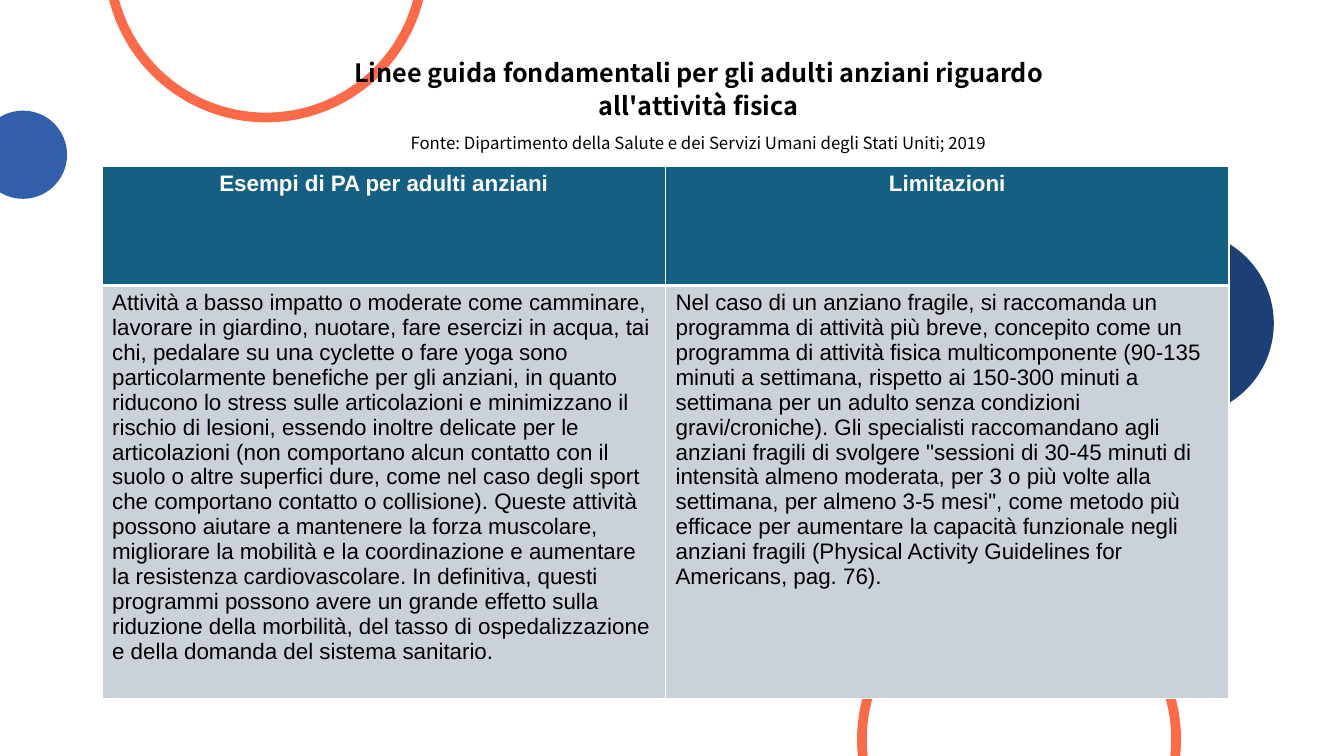
from dataclasses import dataclass

from lxml.etree import SubElement
from pptx import Presentation
from pptx.dml.color import RGBColor
from pptx.enum.shapes import MSO_SHAPE
from pptx.enum.text import MSO_AUTO_SIZE, PP_ALIGN
from pptx.oxml.ns import qn
from pptx.util import Pt

TITLE = "Linee guida fondamentali per gli adulti anziani riguardo all'attività fisica"
SOURCE = "Fonte: Dipartimento della Salute e dei Servizi Umani degli Stati Uniti; 2019"
HEADS = ["Esempi di PA per adulti anziani", "Limitazioni"]
BODY = [
    "Attività a basso impatto o moderate come camminare, lavorare in giardino, "
    "nuotare, fare esercizi in acqua, tai chi, pedalare su una cyclette o fare yoga "
    "sono particolarmente benefiche per gli anziani, in quanto riducono lo stress "
    "sulle articolazioni e minimizzano il rischio di lesioni, essendo inoltre "
    "delicate per le articolazioni (non comportano alcun contatto con il suolo o "
    "altre superfici dure, come nel caso degli sport che comportano contatto o "
    "collisione). Queste attività possono aiutare a mantenere la forza muscolare, "
    "migliorare la mobilità e la coordinazione e aumentare la resistenza "
    "cardiovascolare. In definitiva, questi programmi possono avere un grande "
    "effetto sulla riduzione della morbilità, del tasso di ospedalizzazione e della "
    "domanda del sistema sanitario.",
    "Nel caso di un anziano fragile, si raccomanda un programma di attività più "
    "breve, concepito come un programma di attività fisica multicomponente (90-135 "
    "minuti a settimana, rispetto ai 150-300 minuti a settimana per un adulto senza "
    "condizioni gravi/croniche). Gli specialisti raccomandano agli anziani fragili "
    'di svolgere "sessioni di 30-45 minuti di intensità almeno moderata, per 3 o più '
    'volte alla settimana, per almeno 3-5 mesi", come metodo più efficace per '
    "aumentare la capacità funzionale negli anziani fragili (Physical Activity "
    "Guidelines for Americans, pag. 76).",
]


@dataclass(frozen=True)
class Theme:
    navy: str = "1E3F76"
    blue: str = "315FAB"
    coral: str = "FB6B49"
    teal: str = "156082"
    gray: str = "CAD1D8"
    white: str = "FFFFFF"
    black: str = "000000"
    title_font: str = "Noto Sans CJK KR"
    cell_font: str = "Arial"
    title_size: int = 18
    source_size: int = 12
    cell_size: int = 16


theme = Theme()

# shape, left, top, diameter, colour
ROUNDS = [
    (MSO_SHAPE.OVAL, 776.9, 164.5, 133, theme.navy),
    (MSO_SHAPE.OVAL, -15.1, 79, 63, theme.blue),
    (MSO_SHAPE.DONUT, 612.2, 412.5, 231.4, theme.coral),
    (MSO_SHAPE.DONUT, 74.4, -144, 231.4, theme.coral),
]
RING = 0.03

# height, fill, text colour, bold, alignment, top rule, bottom rule, texts
ROWS = [
    (85, theme.teal, theme.white, True, PP_ALIGN.CENTER, 1, 3, HEADS),
    (295, theme.gray, theme.black, False, PP_ALIGN.LEFT, 3, 1, BODY),
]
LEFT, TOP, WIDTH = 72.9, 119, 805


def style(para, font, size, color, bold, align):
    para.alignment = align
    for run in para.runs:
        run.font.name = font
        run.font.size = Pt(size)
        run.font.bold = bold
        run.font.color.rgb = RGBColor.from_string(color)


def add_round(slide, kind, left, top, size, color):
    shape = slide.shapes.add_shape(kind, Pt(left), Pt(top), Pt(size), Pt(size))
    shape.shadow.inherit = False
    shape.fill.solid()
    shape.fill.fore_color.rgb = RGBColor.from_string(color)
    shape.line.fill.background()
    if kind == MSO_SHAPE.DONUT:
        shape.adjustments[0] = RING


def add_title(slide):
    box = slide.shapes.add_textbox(Pt(221.8), Pt(36), Pt(554.4), Pt(54))
    frame = box.text_frame
    frame.word_wrap = True
    frame.auto_size = MSO_AUTO_SIZE.SHAPE_TO_FIT_TEXT
    frame.text = f"{TITLE}\n{SOURCE}"
    looks = [(theme.title_size, True), (theme.source_size, False)]
    for para, (size, bold) in zip(frame.paragraphs, looks):
        para.line_spacing = 1.07
        style(para, theme.title_font, size, theme.black, bold, PP_ALIGN.CENTER)
    frame.paragraphs[1].space_before = Pt(8)


def add_rules(cell, top, bottom):
    """Draw white borders; call before the fill is set."""
    props = cell._tc.get_or_add_tcPr()
    for side, width in (("L", 1), ("R", 1), ("T", top), ("B", bottom)):
        line = SubElement(props, qn(f"a:ln{side}"), w=str(Pt(width)))
        fill = SubElement(line, qn("a:solidFill"))
        SubElement(fill, qn("a:srgbClr"), val=theme.white)


def add_grid(slide):
    high = sum(row[0] for row in ROWS)
    table = slide.shapes.add_table(
        len(ROWS), len(HEADS), Pt(LEFT), Pt(TOP), Pt(WIDTH), Pt(high)
    ).table
    table.horz_banding = False
    for col in table.columns:
        col.width = Pt(WIDTH / len(HEADS))
    for row, (tall, fill, color, bold, align, top, bottom, texts) in zip(table.rows, ROWS):
        row.height = Pt(tall)
        for cell, text in zip(row.cells, texts):
            add_rules(cell, top, bottom)
            cell.fill.solid()
            cell.fill.fore_color.rgb = RGBColor.from_string(fill)
            cell.text_frame.text = text
            style(cell.text_frame.paragraphs[0], theme.cell_font,
                  theme.cell_size, color, bold, align)


def main():
    deck = Presentation()
    deck.slide_width, deck.slide_height = Pt(960), Pt(540)
    slide = deck.slides.add_slide(deck.slide_layouts[6])
    for item in ROUNDS:
        add_round(slide, *item)
    add_title(slide)
    add_grid(slide)
    deck.save("out.pptx")


if __name__ == "__main__":
    main()
